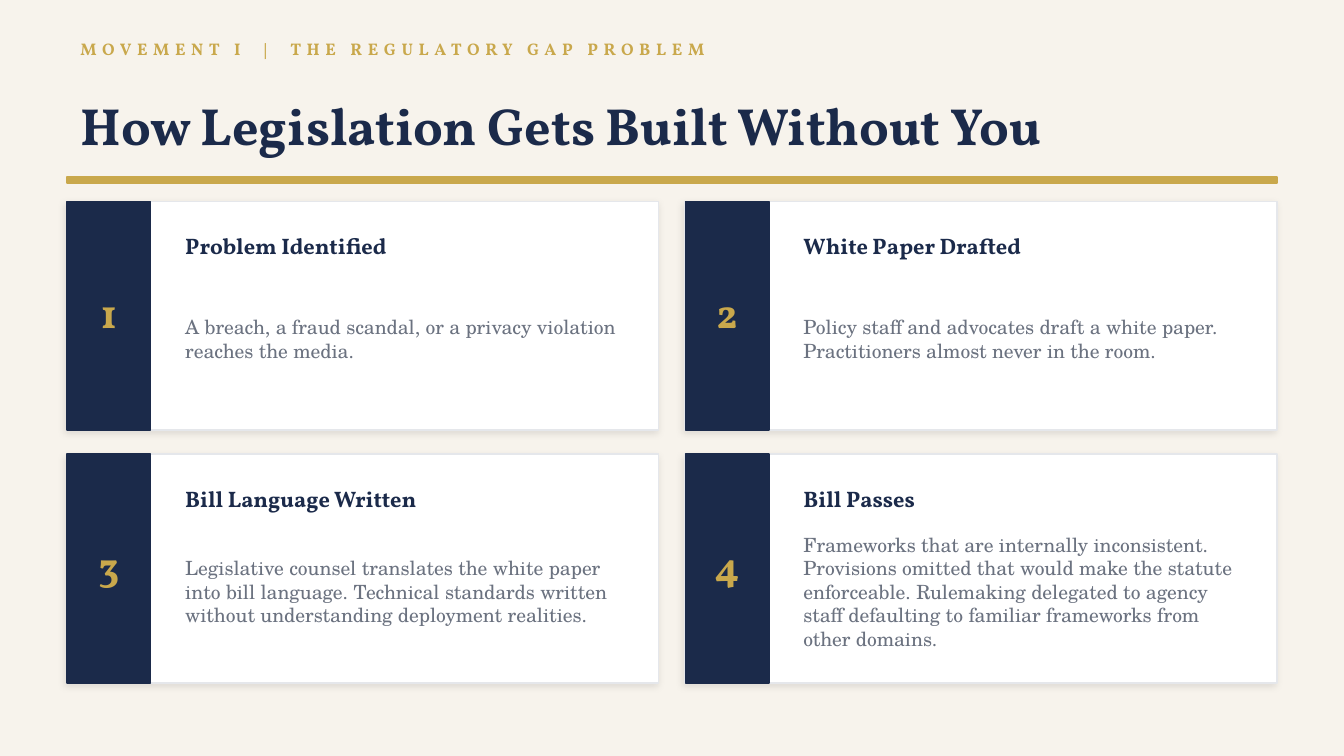
"""Build the slide on the four steps of legislation."""
from dataclasses import dataclass

from lxml.etree import SubElement
from pptx import Presentation
from pptx.dml.color import RGBColor
from pptx.enum.shapes import MSO_SHAPE
from pptx.enum.text import MSO_ANCHOR, PP_ALIGN
from pptx.oxml.ns import qn
from pptx.util import Pt

PX = 4572
WIDTH, HEIGHT = 2000, 1125
MARGIN = 100
CARD_TOP = 300
CARD_WIDTH, CARD_HEIGHT = 880, 340
COLUMN_GAP, ROW_GAP = 40, 36
COLUMNS = 2
BAND_WIDTH = 124
TEXT_INDENT, TEXT_WIDTH = 156, 690

STEPS = [
    ("Problem Identified",
     "A breach, a fraud scandal, or a privacy violation reaches the media."),
    ("White Paper Drafted",
     "Policy staff and advocates draft a white paper. "
     "Practitioners almost never in the room."),
    ("Bill Language Written",
     "Legislative counsel translates the white paper into bill language. "
     "Technical standards written without understanding deployment realities."),
    ("Bill Passes",
     "Frameworks that are internally inconsistent. Provisions omitted that would "
     "make the statute enforceable. Rulemaking delegated to agency staff "
     "defaulting to familiar frameworks from other domains."),
]


@dataclass(frozen=True)
class Theme:
    """Colours, fonts and type sizes of the slide."""
    cream: str = "F7F3EC"
    gold: str = "C9A84C"
    navy: str = "1B2A4A"
    white: str = "FFFFFF"
    border: str = "E5E7EB"
    grey: str = "6B7280"
    shade: str = "000000"
    display: str = "Vollkorn"
    body: str = "TeX Gyre Schola"
    kicker_size: float = 9
    title_size: float = 28
    number_size: float = 22
    heading_size: float = 12
    body_size: float = 10.5


class Painter:
    """Draws styled elements on the current slide."""

    def __init__(self, slide, theme):
        """Keep the slide and theme and colour the background."""
        self.slide = slide
        self.theme = theme
        background = slide.background.fill
        background.solid()
        background.fore_color.rgb = RGBColor.from_string(theme.cream)

    def panel(self, left, top, width, height, fill, line):
        """Draw a filled rectangle with a thin outline."""
        panel = self.slide.shapes.add_shape(
            MSO_SHAPE.RECTANGLE, left * PX, top * PX, width * PX, height * PX)
        panel.shadow.inherit = False
        panel.fill.solid()
        panel.fill.fore_color.rgb = RGBColor.from_string(fill)
        panel.line.color.rgb = RGBColor.from_string(line)
        panel.line.width = Pt(1)
        return panel

    def soft_shadow(self, panel):
        """Give a panel a faint outer shadow."""
        effects = panel._element.spPr.find(qn("a:effectLst"))
        shadow = SubElement(effects, qn("a:outerShdw"), blurRad=str(Pt(4)),
                            dist=str(Pt(2)), dir=str(135 * 60000),
                            algn="bl", rotWithShape="0")
        colour = SubElement(shadow, qn("a:srgbClr"), val=self.theme.shade)
        SubElement(colour, qn("a:alpha"), val="10000")

    def text(self, words, left, top, width, height, size, colour,
             font=None, bold=True, align=PP_ALIGN.LEFT, spacing=None):
        """Write one run in a vertically centred text box."""
        frame = self.slide.shapes.add_textbox(
            left * PX, top * PX, width * PX, height * PX).text_frame
        frame.word_wrap = True
        frame.vertical_anchor = MSO_ANCHOR.MIDDLE
        paragraph = frame.paragraphs[0]
        paragraph.alignment = align
        run = paragraph.add_run()
        run.text = words
        run.font.name = font or self.theme.display
        run.font.size = Pt(size)
        run.font.bold = bold
        run.font.color.rgb = RGBColor.from_string(colour)
        if spacing:
            run._r.get_or_add_rPr().set("spc", str(spacing * 100))

    def header(self, kicker, title):
        """Write the kicker and title above a gold rule."""
        theme = self.theme
        width = WIDTH - 2 * MARGIN
        self.text(kicker, MARGIN, 44, width, 56, theme.kicker_size, theme.gold,
                  spacing=3)
        self.text(title, MARGIN, 110, width, 150, theme.title_size, theme.navy)
        self.panel(MARGIN, 264, width, 8, theme.gold, theme.gold)

    def step_card(self, left, top, number, heading, detail):
        """Draw one numbered step card."""
        theme = self.theme
        card = self.panel(left, top, CARD_WIDTH, CARD_HEIGHT, theme.white, theme.border)
        self.soft_shadow(card)
        self.panel(left, top, BAND_WIDTH, CARD_HEIGHT, theme.navy, theme.navy)
        self.text(str(number), left, top + 110, BAND_WIDTH, 110,
                  theme.number_size, theme.gold, align=PP_ALIGN.CENTER)
        text_left = left + TEXT_INDENT
        self.text(heading, text_left, top + 36, TEXT_WIDTH, 60,
                  theme.heading_size, theme.navy)
        self.text(detail, text_left, top + 104, TEXT_WIDTH, 200,
                  theme.body_size, theme.grey, font=theme.body, bold=False)


def main():
    """Build and save the slide."""
    deck = Presentation()
    deck.slide_width = WIDTH * PX
    deck.slide_height = HEIGHT * PX
    painter = Painter(deck.slides.add_slide(deck.slide_layouts[6]), Theme())
    painter.header("MOVEMENT I  |  THE REGULATORY GAP PROBLEM",
                   "How Legislation Gets Built Without You")
    for index, (heading, detail) in enumerate(STEPS):
        row, column = divmod(index, COLUMNS)
        painter.step_card(MARGIN + column * (CARD_WIDTH + COLUMN_GAP),
                          CARD_TOP + row * (CARD_HEIGHT + ROW_GAP),
                          index + 1, heading, detail)
    deck.save("out.pptx")


if __name__ == "__main__":
    main()
